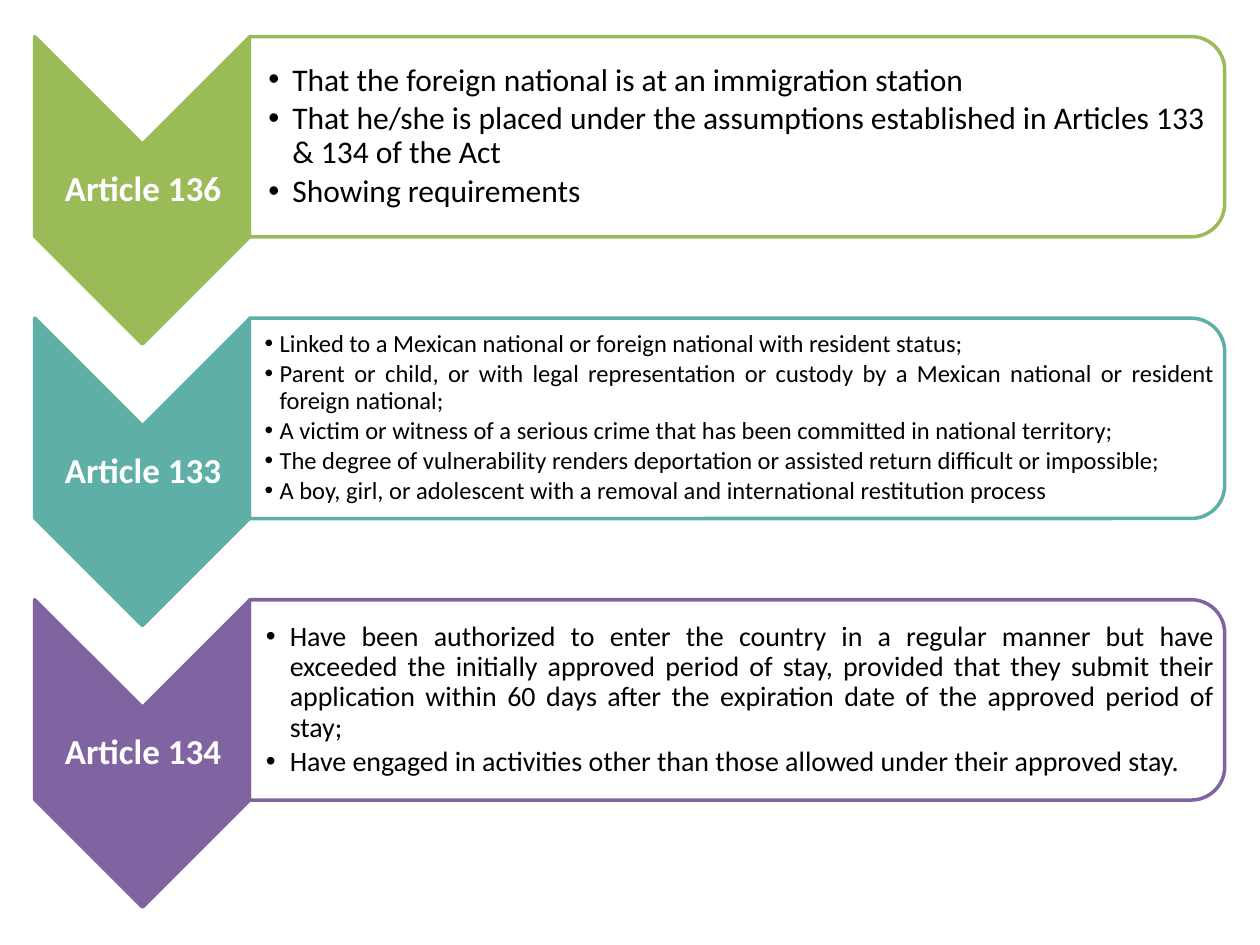
from dataclasses import dataclass

from lxml import etree
from pptx import Presentation
from pptx import util as u
from pptx.dml.color import RGBColor
from pptx.enum import shapes, text
from pptx.oxml.ns import qn

COLORS = {
    "green": "9BBB59",
    "teal": "5EAFA6",
    "purple": "8064A2",
    "white": "FFFFFF",
    "black": "000000",
}
FIRST_TOP = 0.29
PITCH = 2.235
ARROW_LENGTH, ARROW_WIDTH = 2.44, 1.71
PANEL_HEIGHT, PANEL_WIDTH = 1.59, 7.74
ARROW_CENTER_X, PANEL_CENTER_X = 1.13, 5.85


@dataclass(frozen=True)
class Article:
    label: str
    color: str
    size: int
    indent: float
    inset: float
    align: text.PP_ALIGN
    points: tuple[str, ...]


ARTICLES = (
    Article("Article 136", "green", 18, 0.19, 0.14, text.PP_ALIGN.LEFT, (
        "That the foreign national is at an immigration station",
        "That he/she is placed under the assumptions established in Articles 133 & 134 of the Act",
        "Showing requirements",
    )),
    Article("Article 133", "teal", 14, 0.12, 0.11, text.PP_ALIGN.JUSTIFY, (
        "Linked to a Mexican national or foreign national with resident status;",
        "Parent or child, or with legal representation or custody by a Mexican national "
        "or resident foreign national;",
        "A victim or witness of a serious crime that has been committed in national territory;",
        "The degree of vulnerability renders deportation or assisted return difficult or impossible;",
        "A boy, girl, or adolescent with a removal and international restitution process",
    )),
    Article("Article 134", "purple", 16, 0.19, 0.12, text.PP_ALIGN.JUSTIFY, (
        "Have been authorized to enter the country in a regular manner but have exceeded the "
        "initially approved period of stay, provided that they submit their application within "
        "60 days after the expiration date of the approved period of stay;",
        "Have engaged in activities other than those allowed under their approved stay.",
    )),
)


def rgb(name: str) -> RGBColor:
    return RGBColor.from_string(COLORS[name])


def set_values(target, values: dict) -> None:
    for name, value in values.items():
        setattr(target, name, value)


def add_turned_shape(slide, kind, center_x: float, center_y: float,
                     width: float, height: float, fill: str, line: str):
    shape = slide.shapes.add_shape(
        kind, u.Inches(center_x - width / 2), u.Inches(center_y - height / 2),
        u.Inches(width), u.Inches(height))
    shape.rotation = 90
    shape.shadow.inherit = False
    shape.fill.solid()
    shape.fill.fore_color.rgb = rgb(fill)
    shape.line.color.rgb = rgb(line)
    shape.line.width = u.Pt(2)
    return shape


def make_translucent(shape, percent: int) -> None:
    color = shape._element.spPr.find(qn("a:solidFill"))[0]
    etree.SubElement(color, qn("a:alpha"), val=str(percent * 1000))


def add_text(slide, box: tuple[float, ...], lines: tuple[str, ...], size: int, color: str,
             align: text.PP_ALIGN, inset: float = 0.01, bold: bool = False,
             indent: float = 0) -> None:
    frame = slide.shapes.add_textbox(*map(u.Inches, box)).text_frame
    margin = u.Inches(0.01)
    set_values(frame, {
        "word_wrap": True, "vertical_anchor": text.MSO_ANCHOR.MIDDLE,
        "margin_left": u.Inches(inset), "margin_top": margin,
        "margin_right": margin, "margin_bottom": margin,
    })
    for number, line in enumerate(lines):
        paragraph = frame.add_paragraph() if number else frame.paragraphs[0]
        set_values(paragraph, {
            "alignment": align, "line_spacing": 0.9, "space_after": u.Pt(size * 0.15)})
        run = paragraph.add_run()
        run.text = line
        set_values(run.font, {"name": "Calibri", "size": u.Pt(size), "bold": bold})
        run.font.color.rgb = rgb(color)
        if indent:
            add_bullet(paragraph, indent)


def add_bullet(paragraph, indent: float) -> None:
    paragraph.level = 1
    properties = paragraph._p.get_or_add_pPr()
    properties.set("marL", str(u.Inches(indent)))
    properties.set("indent", str(-u.Inches(indent)))
    etree.SubElement(properties, qn("a:buFont"), typeface="Arial")
    etree.SubElement(properties, qn("a:buChar"), char="•")


def add_article(slide, article: Article, top: float) -> None:
    arrow_y = top + ARROW_LENGTH / 2
    add_turned_shape(slide, shapes.MSO_SHAPE.CHEVRON, ARROW_CENTER_X, arrow_y,
                     ARROW_LENGTH, ARROW_WIDTH, article.color, article.color)
    add_text(slide, (0.28, arrow_y - 0.365, ARROW_WIDTH, 0.73), (article.label,),
             20, "white", text.PP_ALIGN.CENTER, bold=True)
    panel_y = top + PANEL_HEIGHT / 2
    panel = add_turned_shape(slide, shapes.MSO_SHAPE.ROUND_2_SAME_RECTANGLE, PANEL_CENTER_X,
                             panel_y, PANEL_HEIGHT, PANEL_WIDTH, "white", article.color)
    make_translucent(panel, 90)
    add_text(slide, (1.99, panel_y - 0.715, 7.66, 1.43), article.points, article.size,
             "black", article.align, inset=article.inset, indent=article.indent)


def main() -> None:
    presentation = Presentation()
    presentation.slide_width = u.Inches(10)
    presentation.slide_height = u.Inches(7.5)
    slide = presentation.slides.add_slide(presentation.slide_layouts[6])
    for index, article in enumerate(ARTICLES):
        add_article(slide, article, FIRST_TOP + index * PITCH)
    presentation.save("out.pptx")


if __name__ == "__main__":
    main()
